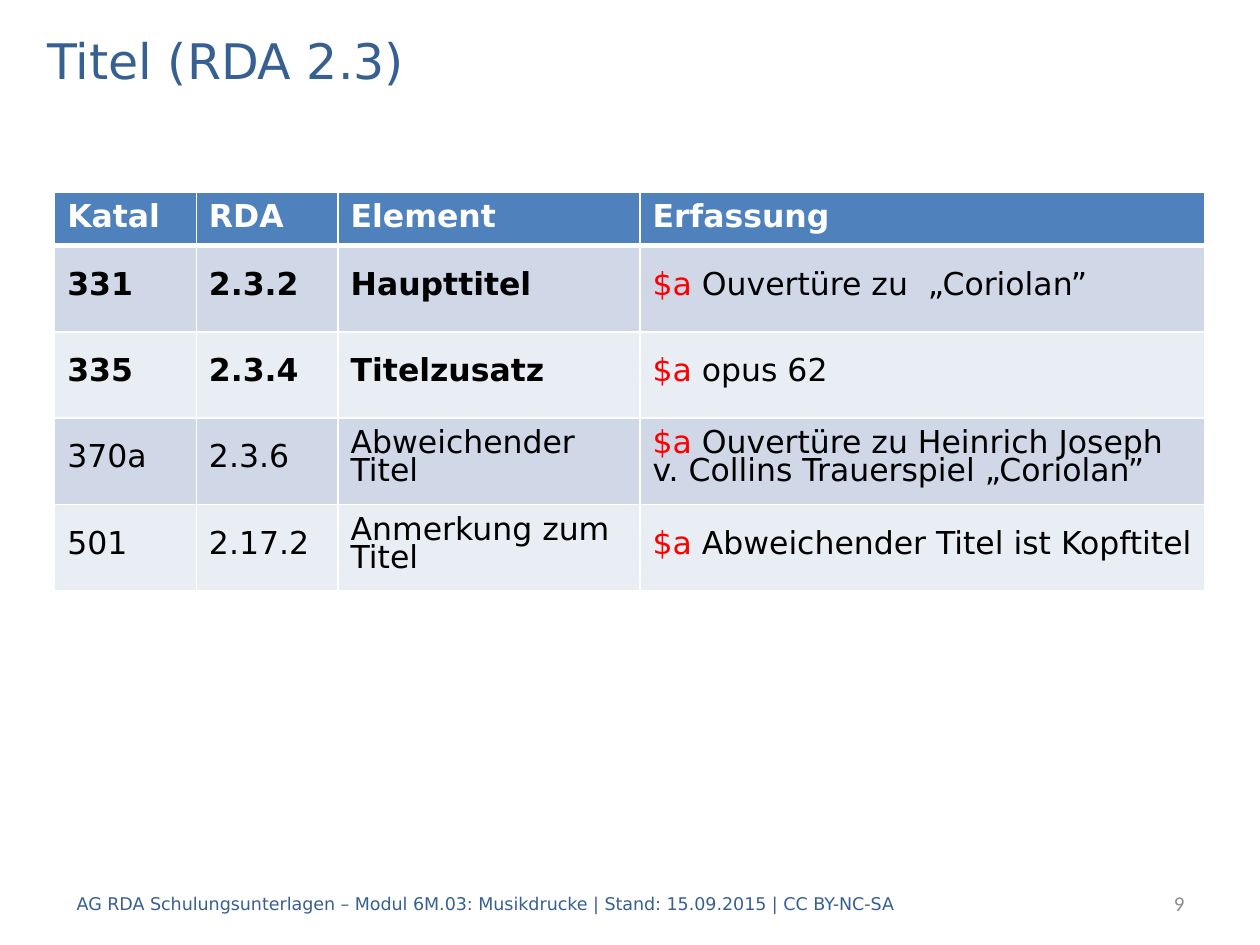
from pptx import Presentation
from pptx.dml.color import RGBColor
from pptx.enum.text import MSO_ANCHOR, PP_ALIGN
from pptx.oxml import parse_xml
from pptx.oxml.ns import nsdecls
from pptx.util import Pt

MIDDLE, TOP = MSO_ANCHOR.MIDDLE, MSO_ANCHOR.TOP
LEFT, RIGHT = PP_ALIGN.LEFT, PP_ALIGN.RIGHT


class Theme:
    font, number_font = "DejaVu Sans", "Calibri"
    title_size, table_size, footer_size, number_size = 28, 18, 10, 12
    blue, grey = "376092", "8C8C8C"
    header, bands = "4F81BD", ("D0D8E8", "E9EDF4")
    white, black, red = "FFFFFF", "000000", "FF0000"


def style(p, size, color, font=Theme.font, bold=False, align=LEFT):
    p.alignment = align
    p.font.name, p.font.size, p.font.bold = font, Pt(size), bold
    p.font.color.rgb = RGBColor.from_string(color)


def set_borders(cell, bottom):
    for side, width in (("L", 1), ("R", 1), ("T", 1), ("B", bottom)):
        cell._tc.get_or_add_tcPr().append(parse_xml(
            f'<a:ln{side} {nsdecls("a")} w="{Pt(width)}"><a:solidFill>'
            f'<a:srgbClr val="{Theme.white}"/></a:solidFill></a:ln{side}>'))


prs = Presentation()
prs.slide_width, prs.slide_height = Pt(720), Pt(540)
s = prs.slides.add_slide(prs.slide_layouts[5])

# Title
title = s.shapes.title
title.left, title.top, title.width, title.height = Pt(20), Pt(14), Pt(680), Pt(40.5)
tf = title.text_frame
tf.text = "Titel (RDA 2.3)"
tf.vertical_anchor = MIDDLE
style(tf.paragraphs[0], Theme.title_size, Theme.blue)

# Footer and slide number
footer = "AG RDA Schulungsunterlagen – Modul 6M.03: Musikdrucke | Stand: 15.09.2015 | CC BY-NC-SA"
for text, left, width, size, color, font, align in (
    (footer, 36.75, 578, Theme.footer_size, Theme.blue, Theme.font, LEFT),
    ("9", 569.5, 114.5, Theme.number_size, Theme.grey, Theme.number_font, RIGHT),
):
    tf = s.shapes.add_textbox(Pt(left), Pt(502), Pt(width), Pt(28.75)).text_frame
    tf.word_wrap = True
    tf.vertical_anchor = MIDDLE
    tf.text = text
    style(tf.paragraphs[0], size, color, font, align=align)

# Table: the first two titles are core elements, set in bold
header = ("Katal", "RDA", "Element", "Erfassung")
entries = (
    ("331", "2.3.2", "Haupttitel", "Ouvertüre zu  „Coriolan”"),
    ("335", "2.3.4", "Titelzusatz", "opus 62"),
    ("370a", "2.3.6", "Abweichender Titel",
     "Ouvertüre zu Heinrich Joseph v. Collins Trauerspiel „Coriolan”"),
    ("501", "2.17.2", "Anmerkung zum Titel", "Abweichender Titel ist Kopftitel"),
)
core_rows = (1, 2)
col_widths = (81, 81, 172.5, 323)
row_heights = (30.2,) + (49.4,) * len(entries)
table = s.shapes.add_table(len(row_heights), len(col_widths), Pt(31.25), Pt(110),
                           Pt(sum(col_widths)), Pt(sum(row_heights))).table
for column, width in zip(table.columns, col_widths):
    column.width = Pt(width)

for i, values in enumerate((header,) + entries):
    table.rows[i].height = Pt(row_heights[i])
    is_header = i == 0
    for j, value in enumerate(values):
        cell = table.cell(i, j)
        set_borders(cell, bottom=3 if is_header else 1)
        cell.fill.solid()
        cell.fill.fore_color.rgb = RGBColor.from_string(
            Theme.header if is_header else Theme.bands[(i - 1) % 2])
        cell.vertical_anchor = TOP if is_header else MIDDLE
        p = cell.text_frame.paragraphs[0]
        has_code = not is_header and j == 3
        style(p, Theme.table_size, Theme.white if is_header else Theme.black,
              bold=is_header or (i in core_rows and not has_code))
        if not is_header:
            p.line_spacing, p.space_before, p.space_after = Pt(16), Pt(6), Pt(6)
        # Subfield code in red ahead of the entry
        if has_code:
            r = p.add_run()
            r.text = "$a "
            r.font.color.rgb = RGBColor.from_string(Theme.red)
        p.add_run().text = value

prs.save("out.pptx")
